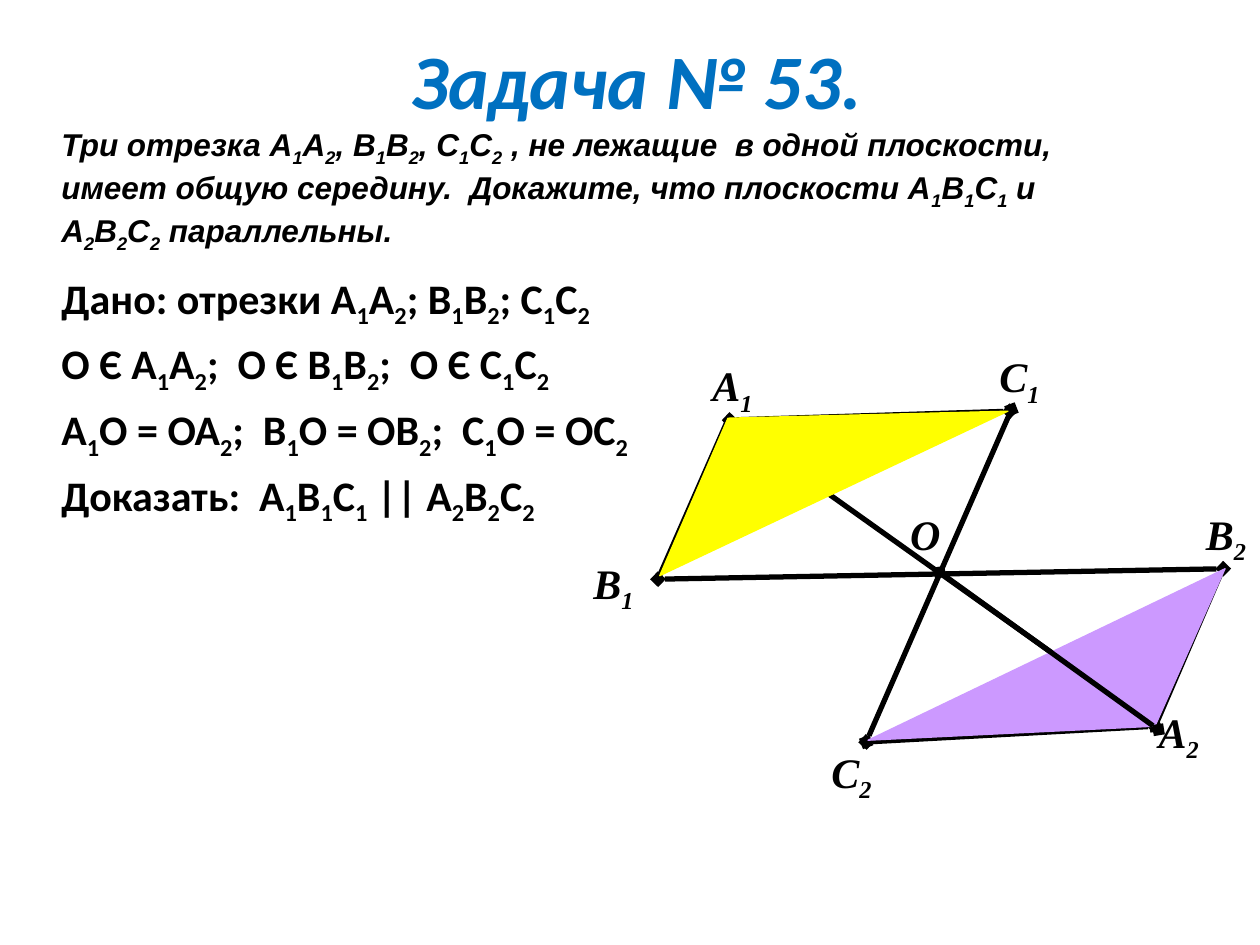
from itertools import groupby

from lxml import etree
from pptx import Presentation
from pptx.dml.color import RGBColor
from pptx.enum.shapes import MSO_CONNECTOR
from pptx.enum.text import MSO_ANCHOR, PP_ALIGN
from pptx.oxml.ns import qn
from pptx.util import Pt

STRAIGHT = MSO_CONNECTOR.STRAIGHT
MIDDLE = MSO_ANCHOR.MIDDLE
CENTER = PP_ALIGN.CENTER

BLACK = RGBColor(0x00, 0x00, 0x00)
BLUE = RGBColor(0x00, 0x70, 0xC0)
YELLOW = RGBColor(0xFF, 0xFF, 0x00)
VIOLET = RGBColor(0xCC, 0x99, 0xFF)

TASK = ("Три отрезка А1А2, В1В2, С1С2 , не лежащие  в одной плоскости,  "
        "имеет общую середину.  Докажите, что плоскости А1В1С1 и А2В2С2 параллельны.")
GIVEN = [
    "Дано: отрезки А1А2; В1В2; С1С2",
    "О Є А1А2;  О Є В1В2;  О Є С1С2",
    "А1О = ОА2;  В1О = ОВ2;  С1О = ОС2",
    "Доказать:  А1В1С1 || А2В2С2",
]
SEGMENTS = [
    (417, 242, 660, 415, True),
    (376, 331, 699, 325, True),
    (578, 234, 495, 424, True),
    (415, 242, 376, 331, False),
    (698, 327, 661, 413, False),
    (417, 240, 577, 235, True),
    (495, 424, 660, 415, True),
]
LABELS = [
    ("А1", 400, 202), ("В1", 332, 315), ("С1", 564, 197), ("О", 513, 287),
    ("А2", 655, 400), ("В2", 682, 287), ("С2", 468, 423),
]


class Drawing:
    """Draws styled text and geometry on one slide, in points."""

    def __init__(self, slide):
        self.slide = slide
        self.shapes = slide.shapes

    def run(self, p, text, font, size, color, italic):
        r = p.add_run()
        r.text = text
        r.font.name = font
        r.font.size = Pt(size)
        r.font.bold = True
        r.font.italic = italic
        r.font.color.rgb = color
        return r

    def title(self, text, x, y, w, h):
        sp = self.shapes.title
        sp.left, sp.top, sp.width, sp.height = Pt(x), Pt(y), Pt(w), Pt(h)
        tf = sp.text_frame
        tf.vertical_anchor = MIDDLE
        p = tf.paragraphs[0]
        p.alignment = CENTER
        self.run(p, text, "Calibri", 44, BLUE, True)

    def text(self, lines, x, y, w, h, font, size, italic=True, wrap=True, before=0):
        tf = self.shapes.add_textbox(Pt(x), Pt(y), Pt(w), Pt(h)).text_frame
        tf.word_wrap = wrap
        for i, line in enumerate(lines):
            p = tf.add_paragraph() if i else tf.paragraphs[0]
            p.space_before = Pt(before)
            for is_index, chars in groupby(line, str.isdigit):
                r = self.run(p, "".join(chars), font, size, BLACK, italic)
                if is_index:
                    r.font._element.set("baseline", "-25000")

    def segment(self, x1, y1, x2, y2, ends=True):
        sp = self.shapes.add_connector(STRAIGHT, Pt(x1), Pt(y1), Pt(x2), Pt(y2))
        sp.line.color.rgb = BLACK
        sp.line.width = Pt(3)
        if ends:
            ln = sp.line._get_or_add_ln()
            for tag in ("a:headEnd", "a:tailEnd"):
                etree.SubElement(ln, qn(tag), type="diamond")
        etree.SubElement(sp._element.spPr, qn("a:effectLst"))

    def triangle(self, points, color):
        start, *rest = [(Pt(x), Pt(y)) for x, y in points]
        builder = self.shapes.build_freeform(*start)
        builder.add_line_segments(rest, close=True)
        sp = builder.convert_to_shape()
        sp.shadow.inherit = False
        sp.fill.solid()
        sp.fill.fore_color.rgb = color
        sp.line.color.rgb = color
        sp.line.width = Pt(0.75)


def main():
    prs = Presentation()
    prs.slide_width, prs.slide_height = Pt(720), Pt(540)
    d = Drawing(prs.slides.add_slide(prs.slide_layouts[5]))
    d.title("Задача № 53.", 40, 0, 648, 90)
    d.text(GIVEN, 28, 152, 397, 338, "Calibri", 24, italic=False, before=4.8)
    for segment in SEGMENTS:
        d.segment(*segment)
    for label, x, y in LABELS:
        width = 38 if len(label) > 1 else 32
        d.text([label], x, y, width, 36, "Times New Roman", 24, wrap=False)
    d.triangle([(576, 235), (377, 329), (416, 239)], YELLOW)
    d.triangle([(660, 415), (496, 423), (700, 325)], VIOLET)
    d.segment(537, 327, 662, 417)
    d.text([TASK], 28, 68, 618, 73, "Arial", 18)
    prs.save("out.pptx")


if __name__ == "__main__":
    main()
